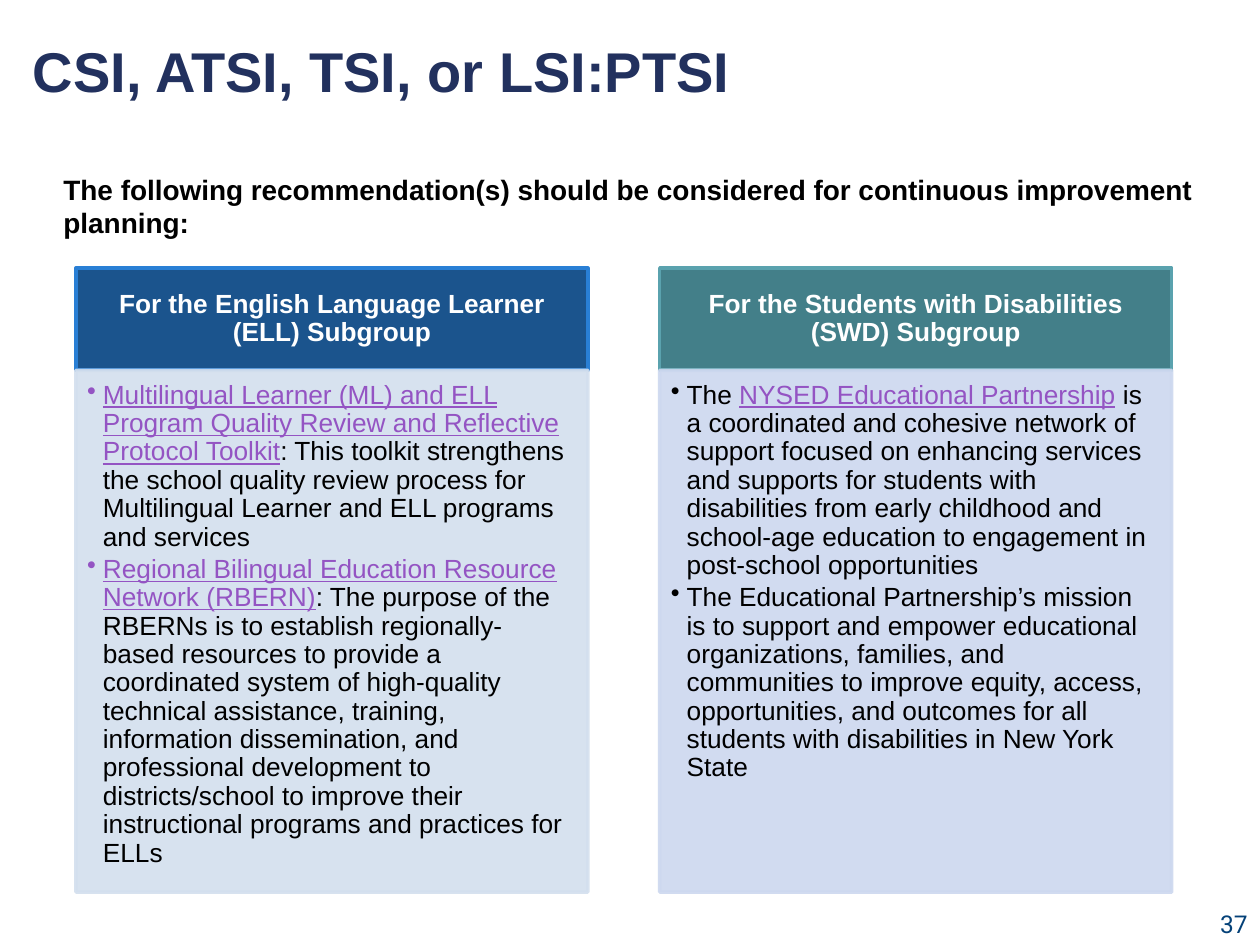
from lxml import etree
from pptx import Presentation
from pptx import util as u
from pptx.dml import color
from pptx.enum import shapes, text
from pptx.oxml import ns

LINK = "9454C3"
BLACK = "000000"


def rgb(value):
    return color.RGBColor.from_string(value)


class SlideBuilder:
    font = "Arial"
    card_size = 15
    card_line = 2
    card_spacing = 0.9

    def __init__(self, slide):
        self.slide = slide

    def add_run(self, paragraph, words, size, hue, bold=False, underline=False, font=None):
        run = paragraph.add_run()
        run.text = words
        run.font.name = font or self.font
        run.font.size = u.Pt(size)
        run.font.bold = bold
        run.font.underline = underline
        run.font.color.rgb = rgb(hue)

    def title(self, words, left, top, width, height):
        shape = self.slide.shapes.title
        shape.left, shape.top = u.Pt(left), u.Pt(top)
        shape.width, shape.height = u.Pt(width), u.Pt(height)
        frame = shape.text_frame
        frame.auto_size = text.MSO_AUTO_SIZE.NONE
        frame.vertical_anchor = text.MSO_ANCHOR.MIDDLE
        paragraph = frame.paragraphs[0]
        paragraph.alignment = text.PP_ALIGN.LEFT
        paragraph.line_spacing = u.Pt(36)
        self.add_run(paragraph, words, 32, "22315E", bold=True)

    def text_box(self, words, left, top, width, height, size, hue,
                 bold=False, font=None, align=text.PP_ALIGN.LEFT):
        shape = self.slide.shapes.add_textbox(u.Pt(left), u.Pt(top), u.Pt(width), u.Pt(height))
        shape.text_frame.word_wrap = True
        paragraph = shape.text_frame.paragraphs[0]
        paragraph.alignment = align
        self.add_run(paragraph, words, size, hue, bold, font=font)

    def panel(self, left, top, width, height, fill, line, margins, anchor):
        shape = self.slide.shapes.add_shape(
            shapes.MSO_SHAPE.RECTANGLE, u.Pt(left), u.Pt(top), u.Pt(width), u.Pt(height))
        shape.shadow.inherit = False
        shape.fill.solid()
        shape.fill.fore_color.rgb = rgb(fill)
        shape.line.color.rgb = rgb(line)
        shape.line.width = u.Pt(self.card_line)
        frame = shape.text_frame
        frame.word_wrap = True
        frame.vertical_anchor = anchor
        (frame.margin_left, frame.margin_top,
         frame.margin_right, frame.margin_bottom) = map(u.Pt, margins)
        return shape

    def header(self, words, left, top, width, height, fill, line):
        shape = self.panel(left, top, width, height, fill, line,
                           (8.4, 4.8, 8.4, 4.8), text.MSO_ANCHOR.MIDDLE)
        paragraph = shape.text_frame.paragraphs[0]
        paragraph.alignment = text.PP_ALIGN.CENTER
        paragraph.line_spacing = self.card_spacing
        self.add_run(paragraph, words, self.card_size, "FFFFFF", bold=True)

    def body(self, items, left, top, width, height, fill):
        shape = self.panel(left, top, width, height, fill, fill,
                           (6.4, 6.4, 8.5, 9.6), text.MSO_ANCHOR.TOP)
        for element in shape._element.spPr.iter(ns.qn("a:srgbClr")):
            etree.SubElement(element, ns.qn("a:alpha"), val="90000")
        frame = shape.text_frame
        for index, runs in enumerate(items):
            paragraph = frame.add_paragraph() if index else frame.paragraphs[0]
            self.bullet(paragraph)
            for words, is_link in runs:
                self.add_run(paragraph, words, self.card_size,
                             LINK if is_link else BLACK, underline=is_link)

    def bullet(self, paragraph):
        paragraph.level = 1
        paragraph.alignment = text.PP_ALIGN.LEFT
        paragraph.line_spacing = self.card_spacing
        paragraph.space_after = u.Pt(2.25)
        properties = paragraph._p.get_or_add_pPr()
        properties.set("marL", str(u.Pt(9)))
        properties.set("indent", str(u.Pt(-9)))
        etree.SubElement(properties, ns.qn("a:buChar"), char="•")


SUBGROUPS = [
    ("For the English Language Learner (ELL) Subgroup", "1B548D", "297FD5", "D3DFEE", [
        [("Multilingual Learner (ML) and ELL Program Quality Review and Reflective "
          "Protocol Toolkit", True),
         (": This toolkit strengthens the school quality review process for "
          "Multilingual Learner and ELL programs and services", False)],
        [("Regional Bilingual Education Resource Network (RBERN)", True),
         (": The purpose of the RBERNs is to establish regionally-based resources to "
          "provide a coordinated system of high-quality technical assistance, training, "
          "information dissemination, and professional development to districts/school to "
          "improve their instructional programs and practices for ELLs", False)],
    ]),
    ("For the Students with Disabilities (SWD) Subgroup", "437F89", "5AA2AE", "CDD8EF", [
        [("The ", False),
         ("NYSED Educational Partnership", True),
         (" is a coordinated and cohesive network of support focused on enhancing "
          "services and supports for students with disabilities from early childhood and "
          "school-age education to engagement in post-school opportunities", False)],
        [("The Educational Partnership’s mission is to support and empower educational "
          "organizations, families, and communities to improve equity, access, "
          "opportunities, and outcomes for all students with disabilities in New York "
          "State", False)],
    ]),
]


def main():
    presentation = Presentation()
    presentation.slide_width, presentation.slide_height = u.Pt(720), u.Pt(540)
    builder = SlideBuilder(presentation.slides.add_slide(presentation.slide_layouts[5]))

    builder.text_box("37", 552, 516, 168, 24, 14, "044178",
                     font="Roboto", align=text.PP_ALIGN.RIGHT)
    builder.title("CSI, ATSI, TSI, or LSI:PTSI", 11.5, 14.4, 738, 54)
    builder.text_box("The following recommendation(s) should be considered for continuous "
                     "improvement planning:", 29.2, 95, 679, 46, 16, BLACK, bold=True)

    left, top, width, pitch = 43.4, 153.2, 292.6, 333.6
    header_height, body_height = 58.4, 298.2
    for column, (heading, fill, line, tint, items) in enumerate(SUBGROUPS):
        x = left + column * pitch
        builder.header(heading, x, top, width, header_height, fill, line)
        builder.body(items, x, top + header_height, width, body_height, tint)

    presentation.save("out.pptx")


if __name__ == "__main__":
    main()
